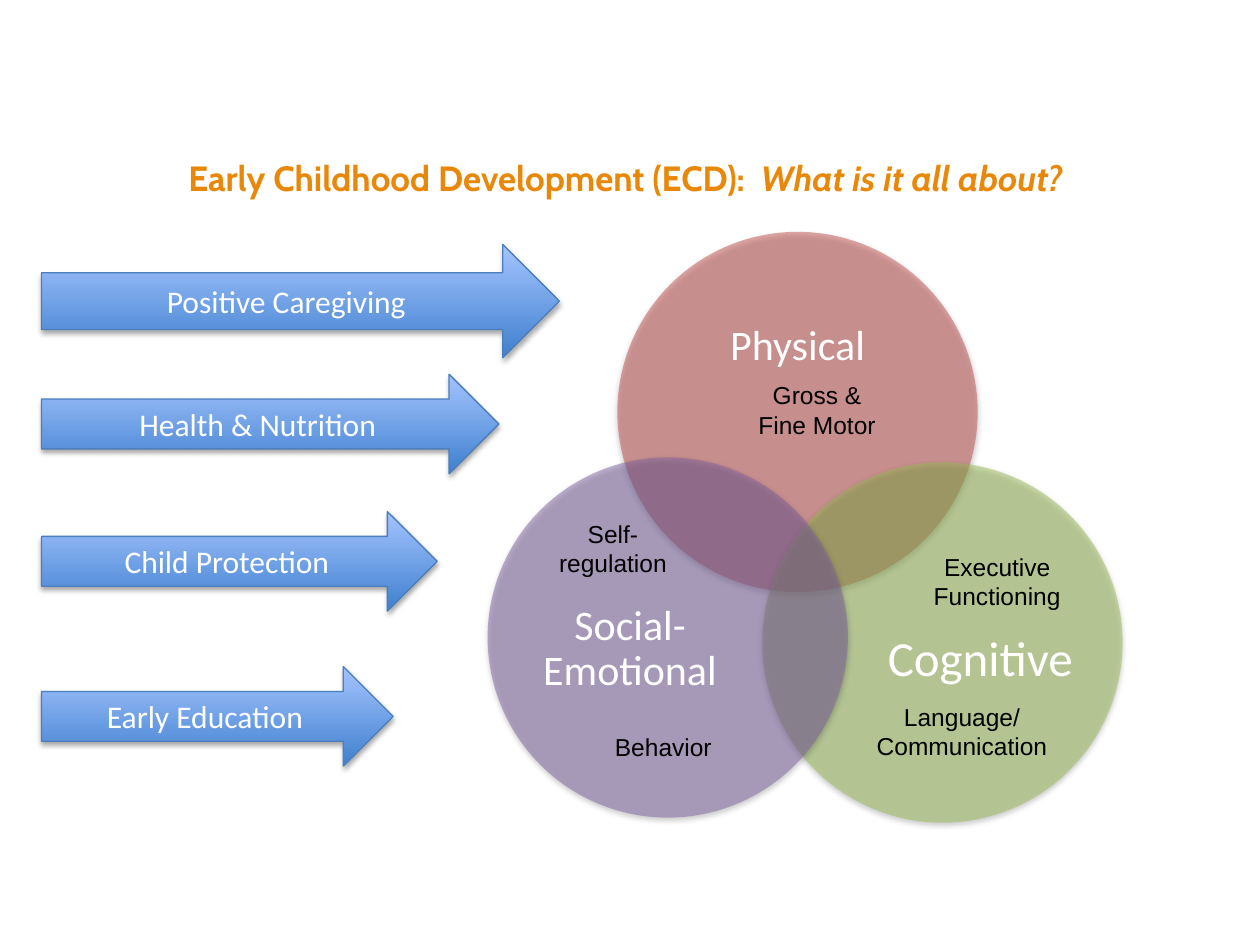
import pptx
import pptx.util
import pptx.dml.color
import pptx.enum.shapes
import pptx.enum.text
import pptx.oxml
import pptx.oxml.ns

Inches = pptx.util.Inches
Pt = pptx.util.Pt
Shapes = pptx.enum.shapes.MSO_SHAPE
Anchor = pptx.enum.text.MSO_ANCHOR

TITLE = [("Early Childhood Development (ECD):  ", False), ("What is it all about?", True)]
DIAMETER = 2.86
DOMAINS = [
    ("Physical", 24, "C0504D", (4.9, 1.84), (5.28, 2.34, 2.1, 0.82)),
    ("Cognitive", 28, "9BBB59", (6.05, 3.67), (6.92, 4.84, 1.72, 0.8)),
    ("Social-Emotional", 24, "8064A2", (3.87, 3.63), (4.14, 4.37, 1.72, 1.57)),
]
SKILLS = [
    ("Executive Functioning", (7.25, 4.33, 1.33, 0.57)),
    ("Language/\nCommunication", (6.69, 5.52, 1.89, 0.57)),
    ("Gross & Fine Motor", (5.82, 2.97, 1.33, 0.57)),
    ("Behavior", (4.6, 5.76, 1.33, 0.34)),
    ("Self-regulation", (4.2, 4.07, 1.33, 0.57)),
]
ARROW_LEFT = 0.33
ARROWS = [
    ("Positive Caregiving", 1.94, 4.11, 0.9),
    ("Health & Nutrition", 2.97, 3.63, 0.79),
    ("Child Protection", 4.06, 3.14, 0.79),
    ("Early Education", 5.29, 2.79, 0.79),
]


def color(value):
    return pptx.dml.color.RGBColor.from_string(value)


def write(shape, text, size, font, tint, anchor=Anchor.MIDDLE):
    frame = shape.text_frame
    frame.text = text
    frame.word_wrap = True
    frame.vertical_anchor = anchor
    for paragraph in frame.paragraphs:
        paragraph.alignment = pptx.enum.text.PP_ALIGN.CENTER
        for span in paragraph.runs:
            span.font.size = Pt(size)
            span.font.name = font
            span.font.color.rgb = color(tint)
    return frame


def add_text(page, bounds, *style):
    box = page.shapes.add_textbox(*map(Inches, bounds))
    return write(box, *style)


def add_shadow(shape, opacity, distance):
    shape.shadow.inherit = False
    effects = shape._element.spPr.find(pptx.oxml.ns.qn("a:effectLst"))
    effects.append(pptx.oxml.parse_xml(
        f'<a:outerShdw {pptx.oxml.ns.nsdecls("a")} blurRad="{Pt(3.1)}" '
        f'dist="{Pt(distance)}" dir="5400000" rotWithShape="0">'
        f'<a:srgbClr val="000000"><a:alpha val="{opacity * 1000}"/></a:srgbClr>'
        '</a:outerShdw>'))


def add_domain(page, name, size, tint, corner, label):
    circle = page.shapes.add_shape(
        Shapes.OVAL, *map(Inches, (*corner, DIAMETER, DIAMETER)))
    circle.fill.solid()
    circle.fill.fore_color.rgb = color(tint)
    solid = circle._element.spPr.find(pptx.oxml.ns.qn("a:solidFill"))
    solid[0].append(pptx.oxml.parse_xml(
        f'<a:alpha {pptx.oxml.ns.nsdecls("a")} val="50000"/>'))
    circle.line.fill.background()
    add_shadow(circle, 38, 1.6)
    frame = add_text(page, label, name, size, "Calibri", "FFFFFF")
    frame.margin_left = frame.margin_right = frame.margin_top = frame.margin_bottom = 0
    frame.paragraphs[0].line_spacing = 0.9


def add_arrow(page, name, top, width, height):
    arrow = page.shapes.add_shape(
        Shapes.RIGHT_ARROW, *map(Inches, (ARROW_LEFT, top, width, height)))
    arrow.fill.gradient()
    arrow.fill.gradient_angle = 90
    for stop, tint in zip(arrow.fill.gradient_stops, ("3F80CE", "A4C4FF")):
        stop.color.rgb = color(tint)
    arrow.line.color.rgb = color("4B7EBC")
    arrow.line.width = Pt(0.75)
    add_shadow(arrow, 35, 1.8)
    write(arrow, name, 18, "Calibri", "FFFFFF")


def add_title(page):
    title = page.shapes.title
    title.left, title.top, title.width, title.height = map(Inches, (0.33, 1.19, 9.27, 0.44))
    frame = title.text_frame
    frame.word_wrap = True
    frame.vertical_anchor = Anchor.TOP
    paragraph = frame.paragraphs[0]
    paragraph.alignment = pptx.enum.text.PP_ALIGN.CENTER
    for text, italic in TITLE:
        span = paragraph.add_run()
        span.text = text
        span.font.size = Pt(20)
        span.font.name = "Cabin"
        span.font.bold = True
        span.font.italic = italic
        span.font.color.rgb = color("E98808")


def main():
    deck = pptx.Presentation()
    deck.slide_width, deck.slide_height = Inches(10), Inches(7.5)
    page = deck.slides.add_slide(deck.slide_layouts.get_by_name("Title Only"))
    add_title(page)
    for domain in DOMAINS:
        add_domain(page, *domain)
    for skill, bounds in SKILLS:
        add_text(page, bounds, skill, 14, "Arial", "000000", Anchor.TOP)
    for arrow in ARROWS:
        add_arrow(page, *arrow)
    deck.save("out.pptx")


if __name__ == "__main__":
    main()
